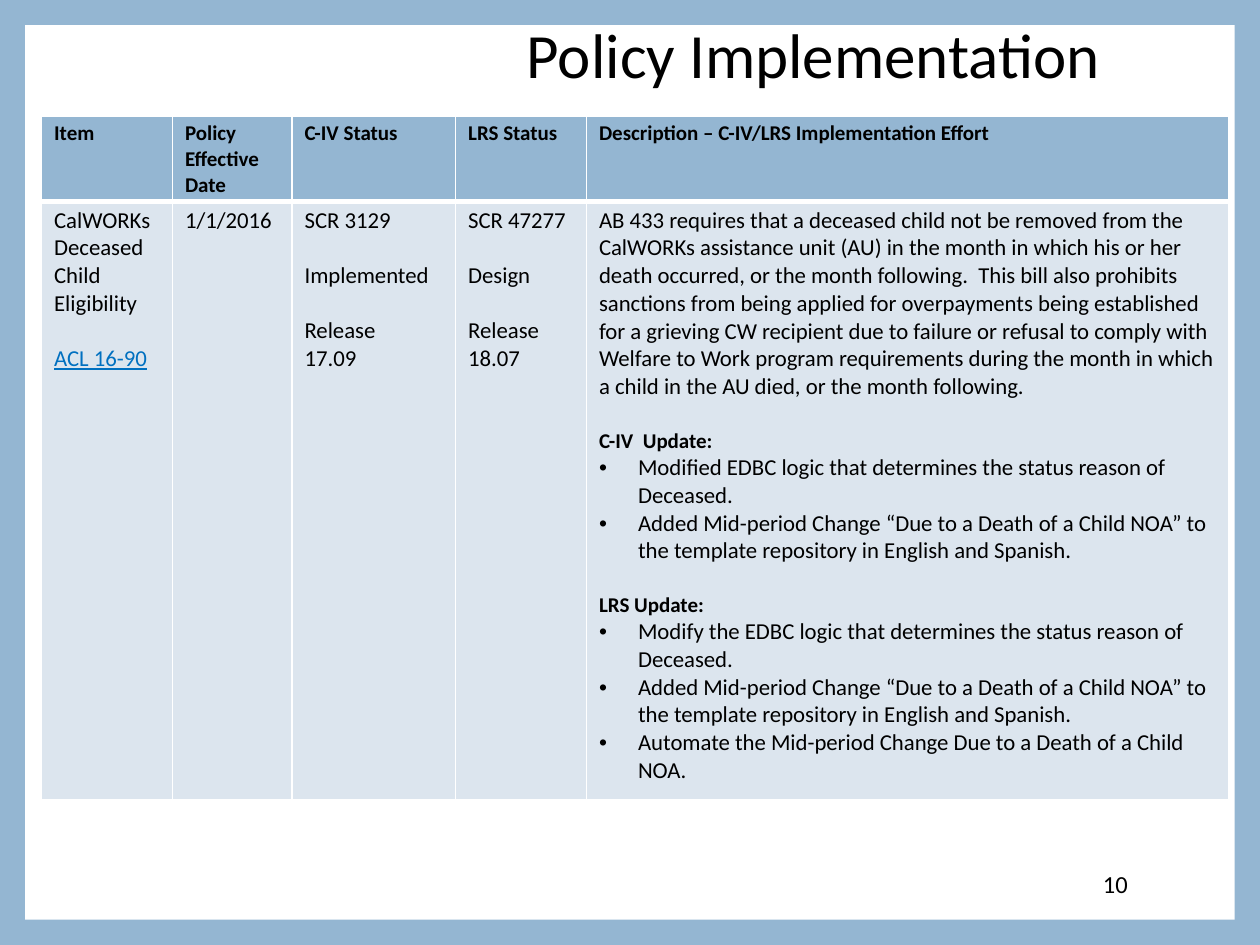
from lxml.etree import SubElement
from pptx import Presentation
from pptx.dml.color import RGBColor
from pptx.enum.shapes import MSO_SHAPE as Shape
from pptx.enum.text import MSO_ANCHOR as Anchor, PP_ALIGN as Align
from pptx.oxml.ns import qn
from pptx.util import Inches, Pt

BLUE = RGBColor(0x94, 0xB6, 0xD2)
PALE = RGBColor(0xDC, 0xE5, 0xEE)
WHITE = RGBColor(0xFF, 0xFF, 0xFF)
BLACK = RGBColor(0, 0, 0)
LINK = RGBColor(0x00, 0x70, 0xC0)
FONT = "Calibri"
LINE_GAP = Pt(15.8)  # one blank line of 13 pt text

COLUMNS = [1.04, 0.95, 1.3, 1.04, 5.1]
ROWS = [0.67, 4.75]
HEADERS = ["Item", "Policy Effective Date", "C-IV Status", "LRS Status",
           "Description – C-IV/LRS Implementation Effort"]
# Each cell is a list of blocks, with a blank line's gap between blocks;
# a block is a list of (kind, text).
DETAILS = [
    [[("body", "CalWORKs Deceased Child Eligibility")], [("link", "ACL 16-90")]],
    [[("body", "1/1/2016")]],
    [[("body", "SCR 3129")], [("body", "Implemented")],
     [("body", "Release"), ("body", "17.09")]],
    [[("body", "SCR 47277")], [("body", "Design")],
     [("body", "Release"), ("body", "18.07")]],
    [[("body", "AB 433 requires that a deceased child not be removed from the "
       "CalWORKs assistance unit (AU) in the month in which his or her death "
       "occurred, or the month following.  This bill also prohibits sanctions "
       "from being applied for overpayments being established for a grieving "
       "CW recipient due to failure or refusal to comply with Welfare to Work "
       "program requirements during the month in which a child in the AU died, "
       "or the month following.")],
     [("heading", "C-IV  Update:"),
      ("bullet", "Modified EDBC logic that determines the status reason of Deceased."),
      ("bullet", "Added Mid-period Change “Due to a Death of a Child NOA” to the "
       "template repository in English and Spanish.")],
     [("heading", "LRS Update:"),
      ("bullet", "Modify the EDBC logic that determines the status reason of Deceased."),
      ("bullet", "Added Mid-period Change “Due to a Death of a Child NOA” to the "
       "template repository in English and Spanish."),
      ("bullet", "Automate the Mid-period Change Due to a Death of a Child NOA.")]],
]


def style_text(p, size, color=BLACK, bold=False, underline=False):
    for r in p.runs:
        f = r.font
        f.name, f.size, f.bold = FONT, Pt(size), bold
        f.color.rgb = color
        if underline:
            f.underline = True


def add_bullet(p):
    pPr = p._p.get_or_add_pPr()
    indent = Inches(0.31)
    pPr.set("marL", str(indent))
    pPr.set("indent", str(-indent))
    SubElement(pPr, qn("a:buFont"), typeface="Arial")
    SubElement(pPr, qn("a:buChar"), char="•")


def fill_cell(cell, blocks, color, top, bottom):
    """Write the blocks; top and bottom are border widths in points."""
    tcPr = cell._tc.get_or_add_tcPr()
    for side, width in (("L", 1), ("R", 1), ("T", top), ("B", bottom)):
        ln = SubElement(tcPr, qn(f"a:ln{side}"), w=str(Pt(width)))
        fill = SubElement(ln, qn("a:solidFill"))
        SubElement(fill, qn("a:srgbClr"), val=str(WHITE))
    cell.fill.solid()
    cell.fill.fore_color.rgb = color
    cell.margin_left = cell.margin_right = Inches(0.1)
    cell.margin_top = cell.margin_bottom = Inches(0.04)

    tf = cell.text_frame
    tf.text = "\n".join(text for block in blocks for _, text in block)
    paragraphs = iter(tf.paragraphs)
    for b, block in enumerate(blocks):
        for i, (kind, _) in enumerate(block):
            p = next(paragraphs)
            if b and i == 0:
                p.space_before = LINE_GAP
            if kind == "bullet":
                add_bullet(p)
            heading, link = kind == "heading", kind == "link"
            style_text(p, 12 if heading else 13, LINK if link else BLACK,
                       heading, link)


def add_policy_table(slide, x, y, w, h):
    table = slide.shapes.add_table(len(ROWS), len(COLUMNS), x, y, w, h).table
    for column, share in zip(table.columns, COLUMNS):
        column.width = int(w * share / sum(COLUMNS))
    for row, share in zip(table.rows, ROWS):
        row.height = int(h * share / sum(ROWS))
    for c, (header, blocks) in enumerate(zip(HEADERS, DETAILS)):
        fill_cell(table.cell(0, c), [[("heading", header)]], BLUE, 1, 3)
        fill_cell(table.cell(1, c), blocks, PALE, 3, 1)


def add_background(slide, x, y, w, h):
    """Blue slide with a white panel in the given box."""
    slide.background.fill.solid()
    slide.background.fill.fore_color.rgb = BLUE
    sp = slide.shapes.add_shape(Shape.RECTANGLE, x, y, w, h)
    sp.shadow.inherit = False
    sp.fill.solid()
    sp.fill.fore_color.rgb = WHITE
    sp.line.fill.background()


def add_right_text(slide, text, size, x, y, w, h, spacing=1.0):
    tf = slide.shapes.add_textbox(x, y, w, h).text_frame
    tf.word_wrap = True
    tf.vertical_anchor = Anchor.MIDDLE
    tf.text = text
    p = tf.paragraphs[0]
    p.alignment, p.line_spacing = Align.RIGHT, spacing
    style_text(p, size)


def main():
    prs = Presentation()
    prs.slide_width, prs.slide_height = Inches(10), Inches(7.5)
    slide = prs.slides.add_slide(prs.slide_layouts[6])

    def box(*lengths):
        return [Inches(length) for length in lengths]

    add_background(slide, *box(0.2, 0.2, 9.6, 7.1))
    add_right_text(slide, "Policy Implementation", 36,
                   *box(0.5, 0.17, 8.33, 0.58), spacing=0.9)
    add_right_text(slide, "10", 14, *box(7.65, 6.81, 1.4, 0.4))
    add_policy_table(slide, *box(0.33, 0.92, 9.42, 5.42))
    prs.save("out.pptx")


if __name__ == "__main__":
    main()
